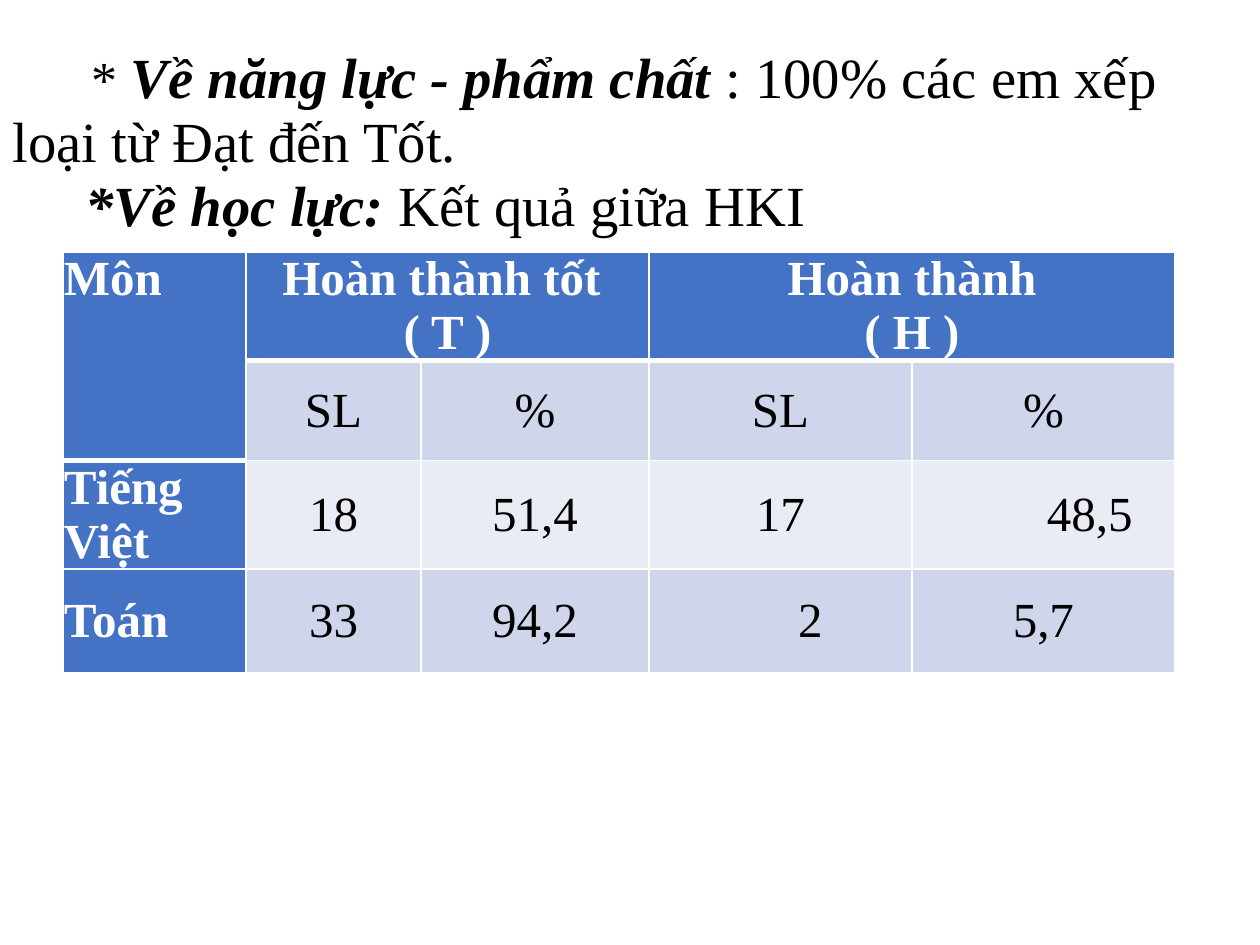
from dataclasses import dataclass

from lxml import etree
from pptx import Presentation
from pptx import util as u
from pptx.dml.color import RGBColor
from pptx.enum import text
from pptx.oxml.ns import qn


@dataclass(frozen=True)
class Theme:
    font: str = "Times New Roman"
    black: str = "000000"
    white: str = "FFFFFF"
    header: str = "4472C4"
    band_dark: str = "CFD5EA"
    band_light: str = "E9EBF5"
    star_size: float = 29.7
    title_size: float = 32.4
    table_size: float = 28
    thin: int = 1
    thick: int = 3


THEME = Theme()
PX = 914400 / 126

TITLE_BOX = (0, 105, 1197, 199)
TITLE_BOTTOM_INSET = 128
TITLE = [
    (79, [("* ", THEME.star_size, False),
          ("Về năng lực - phẩm chất", THEME.title_size, True),
          (" : 100% các em xếp loại từ Đạt đến Tốt.", THEME.title_size, False)]),
    (73, [("*Về học lực: ", THEME.title_size, True),
          ("Kết quả giữa HKI", THEME.title_size, False)]),
]

TABLE_ORIGIN = (63, 252)
COLUMNS = [183, 175, 228, 263, 263]
ROWS = [108, 100, 108, 104]
GRADES = [
    ["Môn", "Hoàn thành tốt \n( T )", "", "Hoàn thành\n( H )", ""],
    ["", "SL", "%", "SL", "%"],
    ["Tiếng Việt", "18", "51,4", "17", "48,5"],
    ["Toán", "33", "94,2", "2", "5,7"],
]
MERGES = [((0, 0), (1, 0)), ((0, 1), (0, 2)), ((0, 3), (0, 4))]
INDENTS = {(2, 4): 134, (3, 3): 60}
LEFT_ALIGNED = {(2, 4)}


def px(value):
    return u.Emu(round(value * PX))


def add_span(para, words, size, color, bold=False, italic=False):
    span = para.add_run()
    span.text = words
    font = span.font
    font.name, font.size = THEME.font, u.Pt(size)
    font.bold, font.italic = bold, italic
    font.color.rgb = RGBColor.from_string(color)


def add_title(page):
    box = page.shapes.title
    box.left, box.top, box.width, box.height = map(px, TITLE_BOX)
    frame = box.text_frame
    frame.word_wrap = True
    frame.auto_size = text.MSO_AUTO_SIZE.NONE
    frame.vertical_anchor = text.MSO_ANCHOR.MIDDLE
    frame.margin_bottom = px(TITLE_BOTTOM_INSET)
    for index, (indent, spans) in enumerate(TITLE):
        para = frame.add_paragraph() if index else frame.paragraphs[0]
        para.alignment = text.PP_ALIGN.LEFT
        para.line_spacing = 0.94
        para._p.get_or_add_pPr().set("indent", str(px(indent)))
        for words, size, strong in spans:
            add_span(para, words, size, THEME.black, strong, strong)


def set_borders(cell, top, bottom):
    widths = {"L": THEME.thin, "R": THEME.thin, "T": top, "B": bottom}
    properties = cell._tc.get_or_add_tcPr()
    for index, (side, width) in enumerate(widths.items()):
        line = etree.Element(qn(f"a:ln{side}"), w=str(u.Pt(width)))
        fill = etree.SubElement(line, qn("a:solidFill"))
        etree.SubElement(fill, qn("a:srgbClr"), val=THEME.white)
        properties.insert(index, line)


def format_cell(cell, row, column, words):
    is_header = row == 0 or column == 0
    band = THEME.band_light if row == 2 else THEME.band_dark
    cell.fill.solid()
    cell.fill.fore_color.rgb = RGBColor.from_string(THEME.header if is_header else band)
    cell.margin_left = cell.margin_right = px(1)
    cell.margin_top = cell.margin_bottom = 0
    is_corner = (row, column) == (0, 0)
    cell.vertical_anchor = text.MSO_ANCHOR.TOP if is_corner else text.MSO_ANCHOR.MIDDLE

    header_end = 1 if column == 0 else 0
    set_borders(cell,
                THEME.thick if row == header_end + 1 else THEME.thin,
                THEME.thick if row == header_end or is_corner else THEME.thin)

    is_left = column == 0 or (row, column) in LEFT_ALIGNED
    for index, line in enumerate(words.split("\n") if words else []):
        frame = cell.text_frame
        para = frame.add_paragraph() if index else frame.paragraphs[0]
        para.alignment = text.PP_ALIGN.LEFT if is_left else text.PP_ALIGN.CENTER
        if (row, column) in INDENTS:
            para._p.get_or_add_pPr().set("marL", str(px(INDENTS[row, column])))
        color = THEME.white if is_header else THEME.black
        add_span(para, line, THEME.table_size, color, bold=is_header)


def add_grades(page):
    size = (sum(COLUMNS), sum(ROWS))
    table = page.shapes.add_table(
        len(ROWS), len(COLUMNS), *map(px, TABLE_ORIGIN + size)).table
    for column, width in zip(table.columns, COLUMNS):
        column.width = px(width)
    for row, height in zip(table.rows, ROWS):
        row.height = px(height)
    for first, last in MERGES:
        table.cell(*first).merge(table.cell(*last))
    for row, line in enumerate(GRADES):
        for column, words in enumerate(line):
            format_cell(table.cell(row, column), row, column, words)


def main():
    deck = Presentation()
    deck.slide_width, deck.slide_height = px(1260), px(945)
    page = deck.slides.add_slide(deck.slide_layouts[5])
    add_title(page)
    add_grades(page)
    deck.save("out.pptx")


if __name__ == "__main__":
    main()
